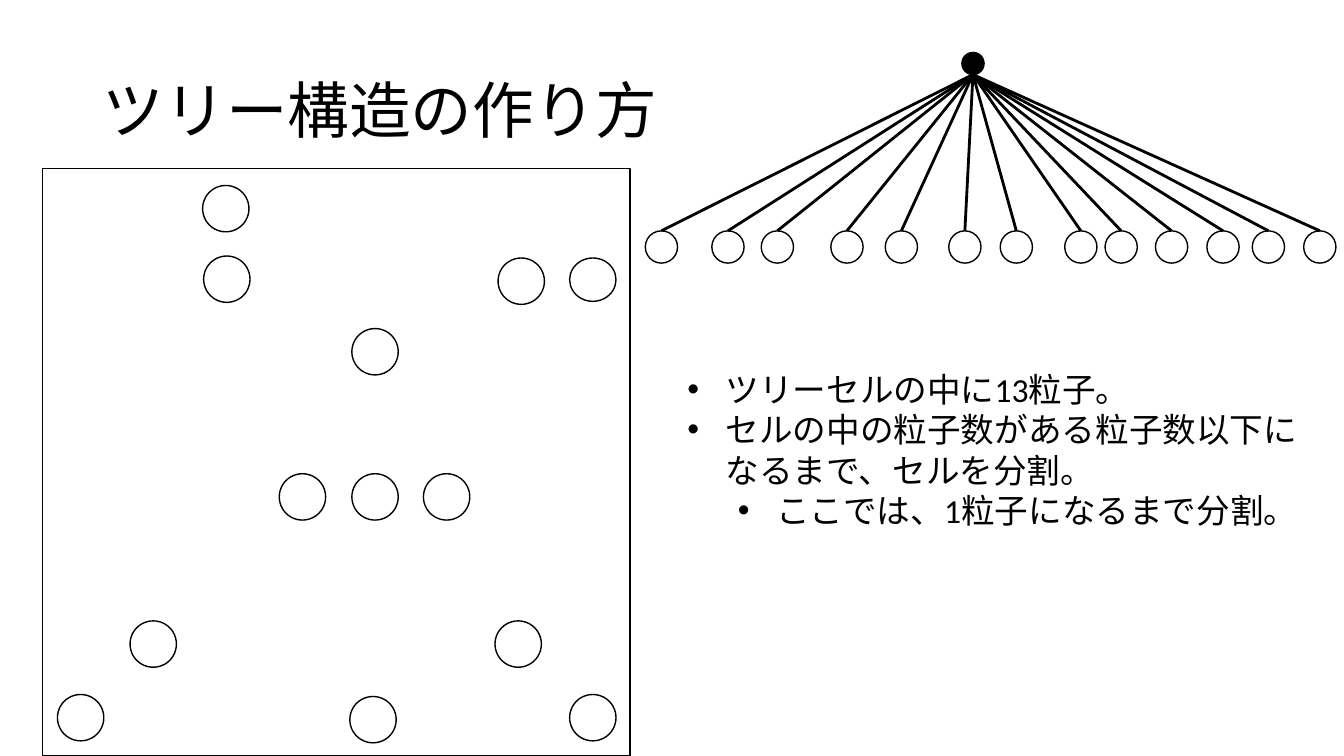
from dataclasses import dataclass

from lxml import etree
from pptx import Presentation
from pptx.dml.color import RGBColor
from pptx.enum.shapes import MSO_CONNECTOR, MSO_SHAPE
from pptx.enum.text import MSO_ANCHOR, MSO_AUTO_SIZE, PP_ALIGN
from pptx.oxml.ns import qn
from pptx.shapes.autoshape import Shape
from pptx.slide import Slide
from pptx.text.text import _Paragraph
from pptx.util import Inches, Pt

STRAIGHT = MSO_CONNECTOR.STRAIGHT
OVAL = MSO_SHAPE.OVAL
RECTANGLE = MSO_SHAPE.RECTANGLE
MIDDLE = MSO_ANCHOR.MIDDLE
LEFT = PP_ALIGN.LEFT
NO_AUTOFIT = MSO_AUTO_SIZE.NONE
FIT_SHAPE = MSO_AUTO_SIZE.SHAPE_TO_FIT_TEXT

COLORS = {"ink": "000000"}
FONT = "Calibri"
TITLE_ONLY = 5
PARTICLE_SIZE = 0.46
LEAF_SIZE = 0.32
ROOT_SIZE = 0.22
ROOT_X, ROOT_Y = 9.65, 0.74
HANGING = 0.38


@dataclass
class Node:
    left: float
    top: float
    size: float
    height: float | None = None


@dataclass
class Bullet:
    text: str
    level: int = 0


PARTICLES = [
    Node(left, top, PARTICLE_SIZE)
    for left, top in [
        (2.01, 1.84), (2.02, 2.54), (4.94, 2.56), (3.49, 3.26),
        (2.77, 4.7), (3.49, 4.7), (4.2, 4.7), (1.29, 6.16),
        (4.91, 6.16), (0.57, 6.89), (3.47, 6.91), (5.65, 6.89),
    ]
] + [Node(5.65, 2.56, PARTICLE_SIZE, 0.43)]

LEAVES = [
    Node(left, 2.29, LEAF_SIZE)
    for left in (6.4, 7.06, 7.55, 8.24, 8.78, 9.41, 9.92,
                 10.56, 10.96, 11.46, 11.97, 12.42, 12.93)
]

BULLETS = [
    Bullet("ツリーセルの中に13粒子。"),
    Bullet("セルの中の粒子数がある粒子数以下になるまで、セルを分割。"),
    Bullet("ここでは、1粒子になるまで分割。", 1),
]


def ink() -> RGBColor:
    return RGBColor.from_string(COLORS["ink"])


def add_outline(s: Slide, kind: MSO_SHAPE, left: float, top: float,
                width: float, height: float) -> Shape:
    sp = s.shapes.add_shape(kind, Inches(left), Inches(top),
                            Inches(width), Inches(height))
    sp.shadow.inherit = False
    sp.fill.background()
    sp.line.color.rgb = ink()
    sp.line.width = Pt(1)
    return sp


def add_node(s: Slide, node: Node) -> Shape:
    return add_outline(s, OVAL, node.left, node.top,
                       node.size, node.height or node.size)


def add_branch(s: Slide, leaf: Shape) -> None:
    line = s.shapes.add_connector(STRAIGHT, Inches(ROOT_X), Inches(ROOT_Y),
                                  leaf.left + leaf.width // 2, leaf.top)
    line.end_connect(leaf, 0)
    line.line.color.rgb = ink()
    line.line.width = Pt(2)
    etree.SubElement(line._element.spPr, qn("a:effectLst"))


def format_runs(p: _Paragraph, size: float) -> None:
    for r in p.runs:
        r.font.name = FONT
        r.font.size = Pt(size)
        r.font.color.rgb = ink()


def add_title(s: Slide, text: str) -> None:
    title = s.shapes.title
    title.left, title.top = Inches(0.92), Inches(0.4)
    title.width, title.height = Inches(11.5), Inches(1.45)
    tf = title.text_frame
    tf.text = text
    tf.vertical_anchor = MIDDLE
    tf.auto_size = NO_AUTOFIT
    p = tf.paragraphs[0]
    p.alignment = LEFT
    p.line_spacing = 0.9
    format_runs(p, 44)


def add_bullets(s: Slide, bullets: list[Bullet]) -> None:
    box = s.shapes.add_textbox(Inches(6.72), Inches(3.61),
                               Inches(6.53), Inches(1.72))
    tf = box.text_frame
    tf.word_wrap = True
    tf.auto_size = FIT_SHAPE
    for i, bullet in enumerate(bullets):
        p = tf.add_paragraph() if i else tf.paragraphs[0]
        p.text = bullet.text
        p.level = bullet.level
        format_runs(p, 24)
        pPr = p._p.get_or_add_pPr()
        pPr.set("marL", str(Inches(HANGING + 0.5 * bullet.level)))
        pPr.set("indent", str(-Inches(HANGING)))
        etree.SubElement(pPr, qn("a:buFont"), typeface="Arial")
        etree.SubElement(pPr, qn("a:buChar"), char="•")


def main() -> None:
    prs = Presentation()
    prs.slide_width, prs.slide_height = Inches(13.33), Inches(7.5)
    s = prs.slides.add_slide(prs.slide_layouts[TITLE_ONLY])
    add_title(s, "ツリー構造の作り方")
    add_outline(s, RECTANGLE, 0.42, 1.67, 5.83, 5.83)
    for particle in PARTICLES:
        add_node(s, particle)
    for leaf in LEAVES:
        add_branch(s, add_node(s, leaf))
    root = add_node(s, Node(ROOT_X - ROOT_SIZE / 2, ROOT_Y - ROOT_SIZE, ROOT_SIZE))
    root.fill.solid()
    root.fill.fore_color.rgb = ink()
    add_bullets(s, BULLETS)
    prs.save("out.pptx")


if __name__ == "__main__":
    main()
